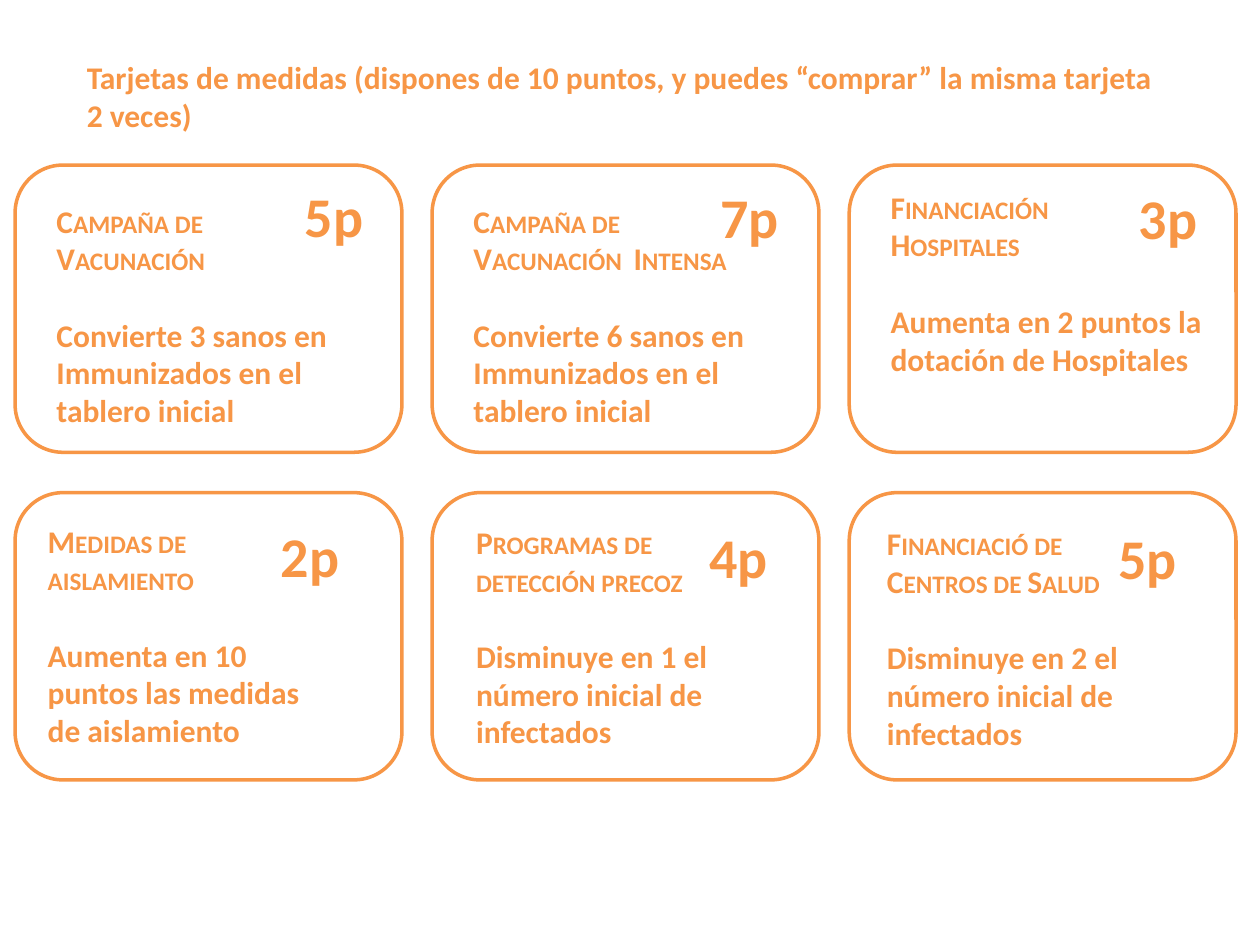
from dataclasses import dataclass

from pptx import Presentation
from pptx.dml.color import RGBColor
from pptx.enum.shapes import MSO_SHAPE
from pptx.enum.text import MSO_AUTO_SIZE
from pptx.util import Inches, Pt

ROUNDED = MSO_SHAPE.ROUNDED_RECTANGLE
FIT_SHAPE = MSO_AUTO_SIZE.SHAPE_TO_FIT_TEXT


@dataclass(frozen=True)
class Theme:
    accent: RGBColor = RGBColor(0xF7, 0x96, 0x46)
    paper: RGBColor = RGBColor(0xFF, 0xFF, 0xFF)
    font: str = "Calibri"
    body: int = 18
    points: int = 32
    effect_gap: int = 22
    outline: int = 2


@dataclass(frozen=True)
class Grid:
    """Card grid in inches: first corner, pitch and card size."""
    left: float = 0.12
    top: float = 1.31
    column: float = 3.31
    row: float = 2.6
    width: float = 3.07
    height: float = 2.28

    def corner(self, column: int, row: int) -> tuple[float, float]:
        return self.left + column * self.column, self.top + row * self.row


@dataclass(frozen=True)
class Measure:
    """A measure card; offsets are inches from the card's corner."""
    column: int
    row: int
    name: tuple[str, ...]
    effect: str
    points: str
    text_at: tuple[float, float]
    text_size: tuple[float, float]
    points_at: tuple[float, float]


THEME = Theme()
GRID = Grid()
POINTS_SIZE = (0.87, 0.64)
HEADING = "Tarjetas de medidas (dispones de 10 puntos, y puedes “comprar” la misma tarjeta 2 veces)"
MEASURES = (
    Measure(0, 0, ("Campaña de Vacunación",),
            "Convierte 3 sanos en Immunizados en el tablero inicial",
            "5p", (0.23, 0.24), (2.36, 1.92), (2.2, 0.08)),
    Measure(1, 0, ("Campaña de Vacunación  Intensa",),
            "Convierte 6 sanos en Immunizados en el tablero inicial",
            "7p", (0.23, 0.24), (2.36, 1.92), (2.19, 0.09)),
    Measure(2, 0, ("Financiación", "Hospitales"),
            "Aumenta en 2 puntos la dotación de Hospitales",
            "3p", (0.23, 0.13), (2.76, 1.62), (2.2, 0.1)),
    Measure(0, 1, ("Medidas de aislamiento",),
            "Aumenta en 10 puntos las medidas de aislamiento",
            "2p", (0.16, 0.18), (2.28, 1.92), (2.01, 0.18)),
    Measure(1, 1, ("Programas de detección precoz",),
            "Disminuye en 1 el número inicial de infectados",
            "4p", (0.25, 0.19), (2.28, 1.92), (2.1, 0.19)),
    Measure(2, 1, ("Financiació de Centros de Salud",),
            "Disminuye en 2 el número inicial de infectados",
            "5p", (0.2, 0.2), (2.28, 1.92), (2.04, 0.2)),
)


def add_frame(slide, left: float, top: float, size: tuple[float, float]):
    """Add an empty wrapping text box and return its text frame."""
    box = slide.shapes.add_textbox(Inches(left), Inches(top), *map(Inches, size))
    frame = box.text_frame
    frame.word_wrap = True
    frame.auto_size = FIT_SHAPE
    return frame


def add_run(paragraph, text: str, size: int = THEME.body, small_caps: bool = False) -> None:
    run = paragraph.add_run()
    run.text = text
    run.font.name = THEME.font
    run.font.size = Pt(size)
    run.font.bold = True
    run.font.color.rgb = THEME.accent
    if small_caps:
        run.font._element.set("cap", "small")


def draw_card(slide, measure: Measure) -> None:
    left, top = GRID.corner(measure.column, measure.row)
    card = slide.shapes.add_shape(
        ROUNDED, *map(Inches, (left, top, GRID.width, GRID.height)))
    card.shadow.inherit = False
    card.fill.solid()
    card.fill.fore_color.rgb = THEME.paper
    card.line.color.rgb = THEME.accent
    card.line.width = Pt(THEME.outline)


def draw_texts(slide, measure: Measure) -> None:
    left, top = GRID.corner(measure.column, measure.row)
    dx, dy = measure.text_at
    description = add_frame(slide, left + dx, top + dy, measure.text_size)
    for index, line in enumerate(measure.name):
        paragraph = description.add_paragraph() if index else description.paragraphs[0]
        add_run(paragraph, line, small_caps=True)
    effect = description.add_paragraph()
    effect.space_before = Pt(THEME.effect_gap)
    add_run(effect, measure.effect)

    dx, dy = measure.points_at
    points = add_frame(slide, left + dx, top + dy, POINTS_SIZE)
    add_run(points.paragraphs[0], measure.points, THEME.points)


def main() -> None:
    deck = Presentation()
    deck.slide_width, deck.slide_height = Inches(10), Inches(7.5)
    slide = deck.slides.add_slide(deck.slide_layouts[6])
    heading = add_frame(slide, 0.59, 0.41, (8.82, 0.71))
    add_run(heading.paragraphs[0], HEADING)
    for measure in MEASURES:
        draw_card(slide, measure)
    for measure in MEASURES:
        draw_texts(slide, measure)
    deck.save("out.pptx")


if __name__ == "__main__":
    main()
